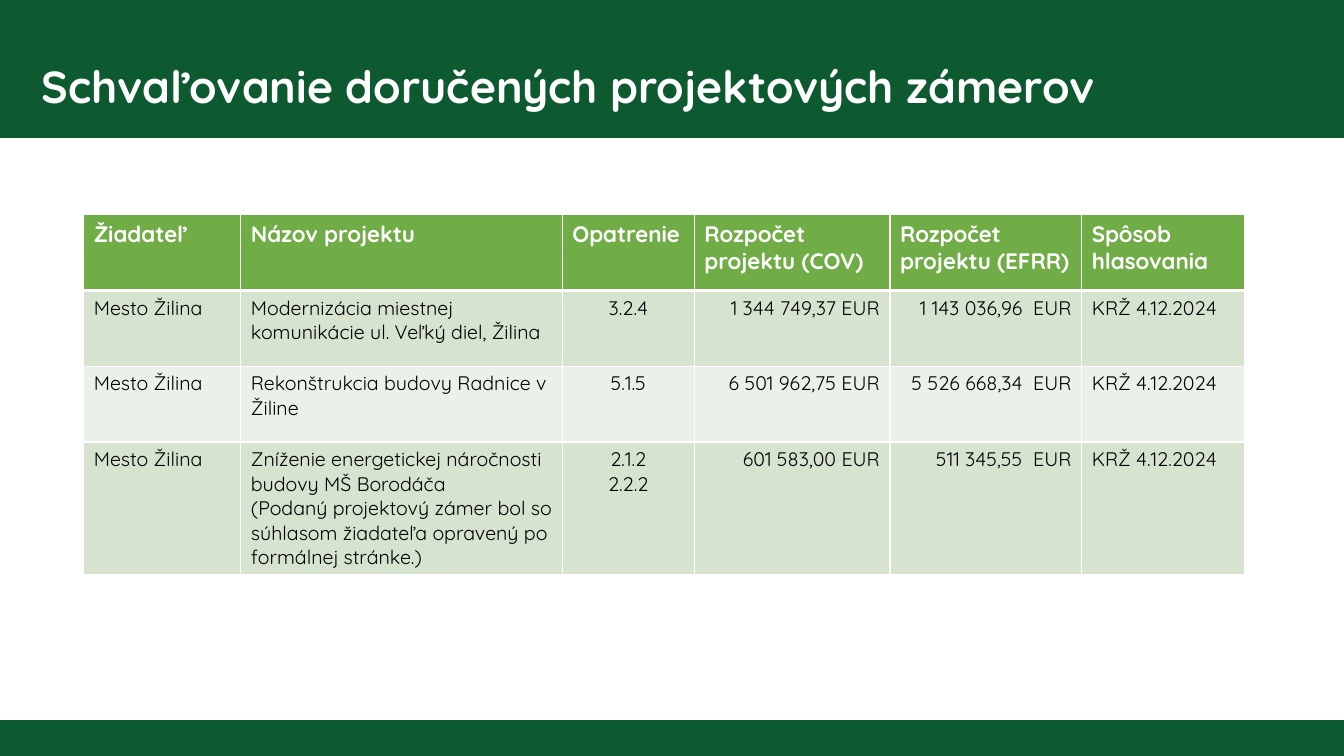
from pptx import Presentation
from pptx import util as u
from pptx.dml.color import RGBColor
from pptx.enum import shapes, text
from pptx.oxml import parse_xml
from pptx.oxml.ns import nsdecls

THEME = {
    "font": "Quicksand",
    "title": 32, "header": 16, "body": 14,
    "dark": "0E5A30", "green": "70AD47", "white": "FFFFFF", "black": "000000",
    "bands": ["D5E3CF", "EBF1E9"],
}


def style(p, size, color, bold=False):
    p.font.name = THEME["font"]
    p.font.size = u.Pt(size)
    p.font.bold = bold
    p.font.color.rgb = RGBColor.from_string(color)


def set_borders(cell, widths):
    tcPr = cell._tc.get_or_add_tcPr()
    for i, (side, width) in enumerate(widths.items()):
        tcPr.insert(i, parse_xml(
            f'<a:{side} {nsdecls("a")} w="{u.Pt(width)}"><a:solidFill>'
            f'<a:srgbClr val="{THEME["white"]}"/></a:solidFill></a:{side}>'))


prs = Presentation()
prs.slide_width, prs.slide_height = u.Cm(33.87), u.Cm(19.05)
s = prs.slides.add_slide(prs.slide_layouts[5])

for left, top, width, height, color in [
    (0, 0, 33.87, 19.05, THEME["dark"]),
    (-0.1, 3.48, 34.06, 14.66, THEME["white"]),
]:
    sp = s.shapes.add_shape(shapes.MSO_SHAPE.RECTANGLE,
                            u.Cm(left), u.Cm(top), u.Cm(width), u.Cm(height))
    sp.shadow.inherit = False
    sp.fill.solid()
    sp.fill.fore_color.rgb = RGBColor.from_string(color)
    sp.line.fill.background()

title = s.shapes.title
s.shapes._spTree.append(title._element)
title.left, title.top, title.width, title.height = u.Cm(0.79), u.Cm(0), u.Cm(29.62), u.Cm(3.48)
tf = title.text_frame
tf.text = "Schvaľovanie doručených projektových zámerov"
tf.word_wrap = True
tf.auto_size = text.MSO_AUTO_SIZE.NONE
tf.vertical_anchor = text.MSO_ANCHOR.TOP
p = tf.paragraphs[0]
p.alignment = text.PP_ALIGN.LEFT
p.line_spacing = 2.0
p.space_before = u.Pt(10)
style(p, THEME["title"], THEME["white"], True)

rows = [
    ["Žiadateľ", "Názov projektu", "Opatrenie", "Rozpočet projektu (COV)",
     "Rozpočet projektu (EFRR)", "Spôsob hlasovania"],
    ["Mesto Žilina", "Modernizácia miestnej komunikácie ul. Veľký diel, Žilina",
     "3.2.4", "1 344 749,37 EUR", "1 143 036,96  EUR", "KRŽ 4.12.2024"],
    ["Mesto Žilina", "Rekonštrukcia budovy Radnice v Žiline",
     "5.1.5", "6 501 962,75 EUR", "5 526 668,34  EUR", "KRŽ 4.12.2024"],
    ["Mesto Žilina",
     "Zníženie energetickej náročnosti budovy MŠ Borodáča\v"
     "(Podaný projektový zámer bol so súhlasom žiadateľa opravený po formálnej stránke.)",
     "2.1.2\v2.2.2", "601 583,00 EUR", "511 345,55  EUR", "KRŽ 4.12.2024"],
]
col_widths = [3.96, 8.1, 3.33, 4.93, 4.83, 4.11]
row_heights = [1.91, 1.91, 1.91, 3.33]
LEFT, CENTER, RIGHT = text.PP_ALIGN.LEFT, text.PP_ALIGN.CENTER, text.PP_ALIGN.RIGHT
aligns = [LEFT, LEFT, CENTER, RIGHT, RIGHT, LEFT]

table = s.shapes.add_table(len(rows), len(col_widths), u.Cm(2.11), u.Cm(5.41),
                           u.Cm(sum(col_widths)), u.Cm(sum(row_heights))).table
for column, width in zip(table.columns, col_widths):
    column.width = u.Cm(width)
for i, (row, height) in enumerate(zip(rows, row_heights)):
    table.rows[i].height = u.Cm(height)
    header = i == 0
    fill = THEME["green"] if header else THEME["bands"][(i - 1) % 2]
    for j, value in enumerate(row):
        cell = table.cell(i, j)
        cell.fill.solid()
        cell.fill.fore_color.rgb = RGBColor.from_string(fill)
        set_borders(cell, {"lnL": 1, "lnR": 1, "lnT": 3 if i == 1 else 1,
                           "lnB": 3 if header else 1})
        cell.text = value
        p = cell.text_frame.paragraphs[0]
        p.alignment = LEFT if header else aligns[j]
        if header:
            style(p, THEME["header"], THEME["white"], True)
        else:
            style(p, THEME["body"], THEME["black"])

prs.save("out.pptx")
